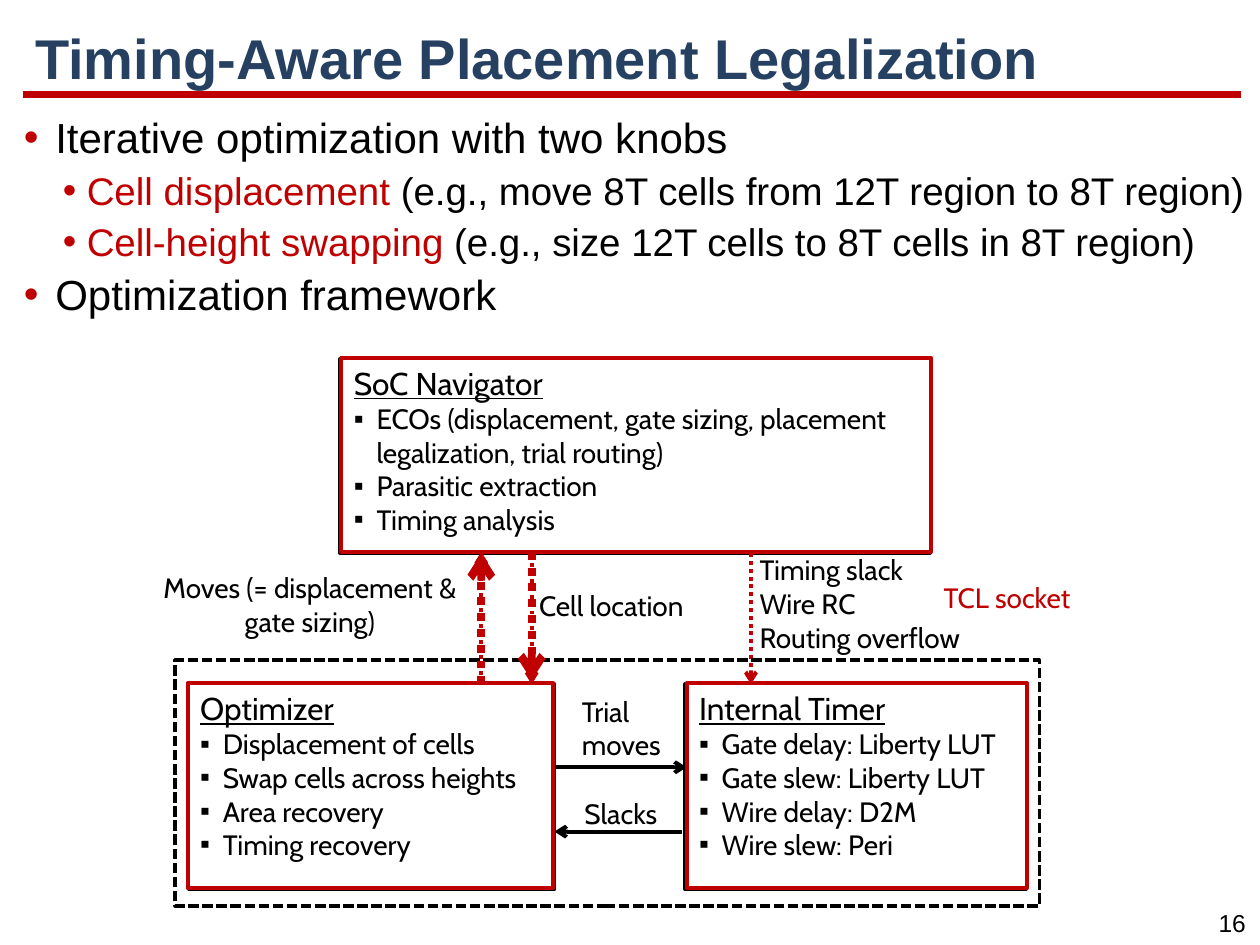
from lxml.etree import SubElement
from pptx import Presentation
from pptx.dml.color import RGBColor
from pptx.enum.dml import MSO_LINE_DASH_STYLE as Dash
from pptx.enum.shapes import MSO_CONNECTOR as Connector, MSO_SHAPE as Shape
from pptx.enum.text import MSO_ANCHOR as Anchor, PP_ALIGN as Align
from pptx.oxml.ns import qn
from pptx.util import Inches, Pt

RED = RGBColor(0xC0, 0x00, 0x00)
NAVY = RGBColor(0x25, 0x40, 0x61)
BLACK = RGBColor(0, 0, 0)
WHITE = RGBColor(0xFF, 0xFF, 0xFF)

# Content
TITLE = "Timing-Aware Placement Legalization"
PAGE_NUMBER = "16"
BULLETS = [  # level, runs of (text, colour)
    (0, [("Iterative optimization with two knobs", BLACK)]),
    (1, [("Cell displacement ", RED),
         ("(e.g., move 8T cells from 12T region to 8T region)", BLACK)]),
    (1, [("Cell-height swapping ", RED),
         ("(e.g., size 12T cells to 8T cells in 8T region)", BLACK)]),
    (0, [("Optimization framework", BLACK)]),
]
LEVELS = [(24, 0.25, 0.25), (22, 0.5, 0.19)]  # size, margin, hanging indent

# Each block: area, shift of the red frame against its black edge, heading, items
OPTIMIZER = ((1.49, 5.42, 2.9, 1.63), -0.01, "Optimizer", [
    "Displacement of cells", "Swap cells across heights",
    "Area recovery", "Timing recovery"])
TIMER = ((5.45, 5.42, 2.7, 1.63), 0.01, "Internal Timer", [
    "Gate delay: Liberty LUT", "Gate slew: Liberty LUT",
    "Wire delay: D2M", "Wire slew: Peri"])
LAYOUT_TOOL = ((2.71, 2.84, 4.68, 1.54), 0.01, "SoC Navigator", [
    "ECOs (displacement, gate sizing, placement legalization, trial routing)",
    "Parasitic extraction", "Timing analysis"])
BLOCKS = [OPTIMIZER, TIMER, LAYOUT_TOOL]

LABELS = [  # area, lines, colour, alignment
    ((4.52, 5.46, 0.99, 0.66), ["Trial", "moves"], BLACK, Align.LEFT),
    ((4.54, 6.27, 0.82, 0.38), ["Slacks"], BLACK, Align.LEFT),
    ((5.93, 4.34, 1.93, 0.94), ["Timing slack", "Wire RC", "Routing overflow"],
     BLACK, Align.LEFT),
    ((1.18, 4.48, 2.56, 0.66), ["Moves (= displacement & gate sizing)"],
     BLACK, Align.CENTER),
    ((4.18, 4.62, 1.45, 0.38), ["Cell location"], BLACK, Align.LEFT),
    ((7.39, 4.56, 1.3, 0.38), ["TCL socket"], RED, Align.LEFT),
]
THIN_ARROWS = [  # start, end, colour, width, dash
    ((4.39, 6.09), (5.45, 6.09), BLACK, 2.25, None),
    ((5.41, 6.6), (4.4, 6.6), BLACK, 2.25, None),
    ((4.22, 4.41), (4.22, 5.43), RED, 2.25, Dash.ROUND_DOT),
    ((5.96, 4.39), (5.96, 5.43), RED, 2.25, Dash.ROUND_DOT),
    ((3.82, 5.42), (3.82, 4.38), RED, 2.25, Dash.ROUND_DOT),
]
THICK_ARROWS = [
    ((3.82, 5.43), (3.82, 4.39), RED, 4.5, Dash.ROUND_DOT),
    ((4.22, 4.38), (4.22, 5.4), RED, 4.5, Dash.ROUND_DOT),
]

deck = Presentation()
deck.slide_width, deck.slide_height = Inches(10), Inches(7.5)
page = deck.slides.add_slide(deck.slide_layouts[6])


def add_span(para, text, size, color, font="Cabin", bold=None, underline=None):
    span = para.add_run()
    span.text = text
    span.font.size, span.font.name = Pt(size), font
    span.font.bold, span.font.underline = bold, underline
    span.font.color.rgb = color


def next_para(frame, index):
    return frame.paragraphs[0] if index == 0 else frame.add_paragraph()


def set_bullet(para, char, margin, hang, color=None):
    props = para._p.get_or_add_pPr()
    props.set("marL", str(Inches(margin)))
    props.set("indent", str(-Inches(hang)))
    if color is not None:
        holder = SubElement(props, qn("a:buClr"))
        SubElement(holder, qn("a:srgbClr"), val=str(color))
    SubElement(props, qn("a:buFont"), typeface="Arial")
    SubElement(props, qn("a:buChar"), char=char)


def add_text_box(area, wrap=True):
    frame = page.shapes.add_textbox(*map(Inches, area)).text_frame
    frame.word_wrap = wrap
    return frame


def add_line(start, end, color, width, dash=None, arrow=True):
    line = page.shapes.add_connector(Connector.STRAIGHT, *map(Inches, start + end))
    line.line.color.rgb, line.line.width = color, Pt(width)
    if dash is not None:
        line.line.dash_style = dash
    if arrow:
        SubElement(line.line._get_or_add_ln(), qn("a:tailEnd"), type="arrow")
    SubElement(line._element.spPr, qn("a:effectLst"))


def add_frame(area, color, width=2.25, fill=None, dash=None):
    box = page.shapes.add_shape(Shape.RECTANGLE, *map(Inches, area))
    box.shadow.inherit = False
    if fill is None:
        box.fill.background()
    else:
        box.fill.solid()
        box.fill.fore_color.rgb = fill
    box.line.color.rgb, box.line.width = color, Pt(width)
    if dash is not None:
        box.line.dash_style = dash
    return box


def add_block(area, shift, heading, items):
    frame = add_frame(area, RED, fill=WHITE).text_frame
    frame.word_wrap = True
    frame.vertical_anchor = Anchor.TOP
    for index, text in enumerate([heading] + items):
        para = next_para(frame, index)
        para.alignment = Align.LEFT
        if index == 0:
            add_span(para, text, 18, BLACK, underline=True)
        else:
            set_bullet(para, "▪", 0.18, 0.18)
            add_span(para, text, 16, BLACK)


# Rule and page number
add_line((0.18, 0.75), (9.85, 0.75), RED, 4.5, arrow=False)
number = add_text_box((9.56, 7.16, 0.44, 0.34), wrap=False).paragraphs[0]
number.alignment = Align.CENTER
add_span(number, PAGE_NUMBER, 14, BLACK, "Arial")

# Title
title = add_text_box((0.18, 0.16, 9.68, 0.65))
title.vertical_anchor = Anchor.MIDDLE
title.paragraphs[0].line_spacing = 0.9
add_span(title.paragraphs[0], TITLE, 32, NAVY, "Arial", bold=True)

# Bullets
body = add_text_box((0.09, 0.9, 9.98, 1.93))
for index, (level, spans) in enumerate(BULLETS):
    size, margin, hang = LEVELS[level]
    para = next_para(body, index)
    para.level = level
    para.line_spacing, para.space_before = 0.85, Pt(size * 0.3)
    set_bullet(para, "•", margin, hang, RED)
    for text, color in spans:
        add_span(para, text, size, color, "Arial")

# Black edges behind the blocks
for (left, top, width, height), shift, heading, items in BLOCKS:
    add_frame((left - shift, top + 0.01, width, height), BLACK)

# Thin arrows, labels and dashed surround
for arrow in THIN_ARROWS:
    add_line(*arrow)
for area, lines, color, alignment in LABELS:
    label = add_text_box(area)
    for index, text in enumerate(lines):
        para = next_para(label, index)
        para.alignment = alignment
        add_span(para, text, 16, color)
add_frame((1.39, 5.24, 6.86, 1.95), BLACK, width=2, dash=Dash.SQUARE_DOT)

# Blocks, with the thick arrows between them
add_block(*OPTIMIZER)
for arrow in THICK_ARROWS:
    add_line(*arrow)
add_block(*LAYOUT_TOOL)
add_block(*TIMER)

deck.save("out.pptx")
